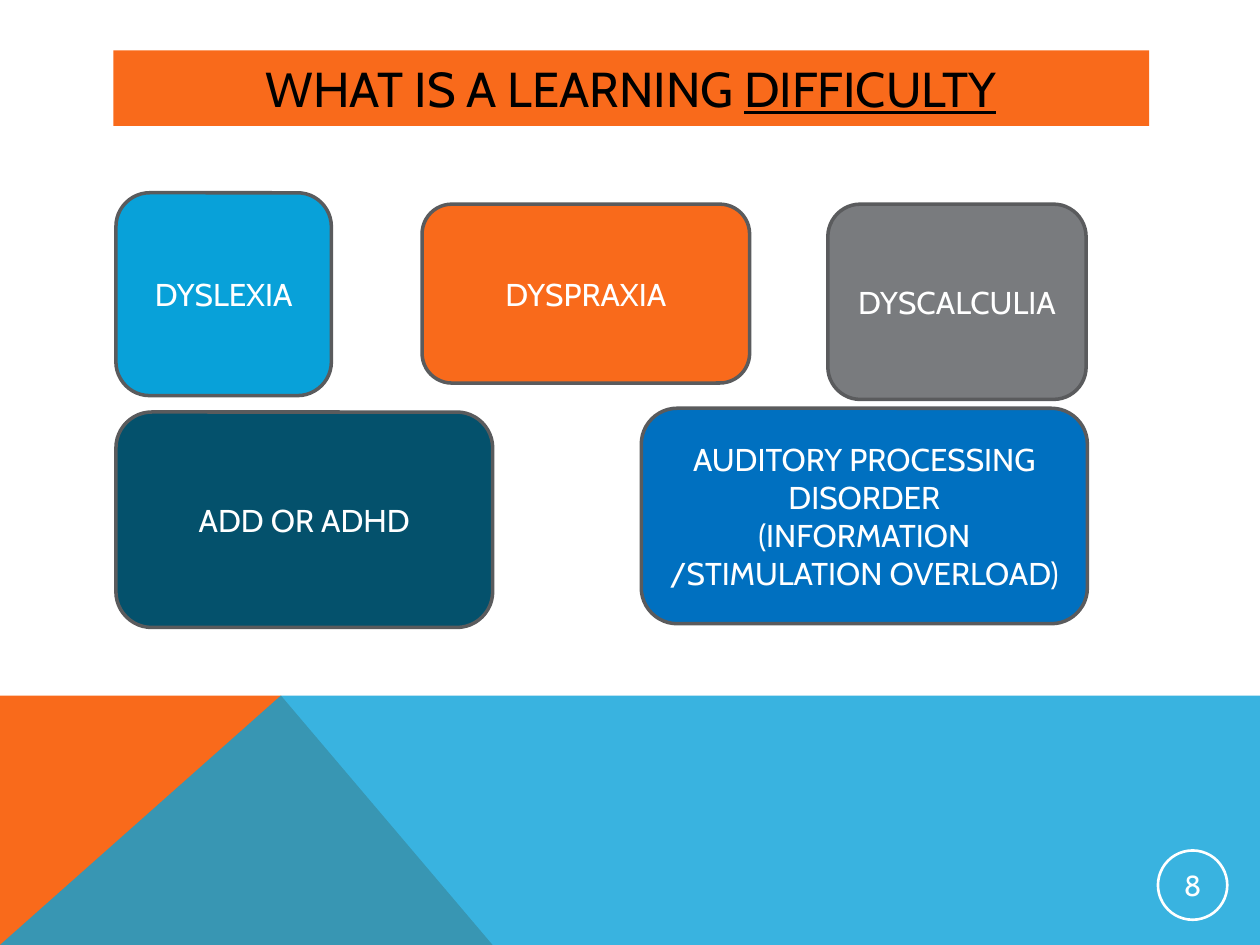
from lxml import etree
from pptx import Presentation
from pptx.dml.color import RGBColor
from pptx.enum.shapes import MSO_SHAPE
from pptx.enum.text import MSO_ANCHOR, PP_ALIGN
from pptx.oxml.ns import qn
from pptx.util import Inches, Pt

RECT, ROUND, OVAL = MSO_SHAPE.RECTANGLE, MSO_SHAPE.ROUNDED_RECTANGLE, MSO_SHAPE.OVAL
MIDDLE, CENTER = MSO_ANCHOR.MIDDLE, PP_ALIGN.CENTER
ORANGE, BLUE, WHITE, EDGE = "F96A1B", "08A1D9", "FFFFFF", "5A5B5D"
color = RGBColor.from_string


def add_box(kind, place, text, fill=None, line=None, width=2, size=18, ink=WHITE, inset=None):
    """Add a shape; text is a list of paragraphs, each a list of runs, with every second run underlined."""
    box = slide.shapes.add_shape(kind, *[Inches(n) for n in place])
    box.shadow.inherit = False
    if fill:
        box.fill.solid()
        box.fill.fore_color.rgb = color(fill)
    else:
        box.fill.background()
    if line:
        box.line.color.rgb = color(line)
        box.line.width = Pt(width)
    else:
        box.line.fill.background()
    frame = box.text_frame
    frame.word_wrap = True
    frame.vertical_anchor = MIDDLE
    if inset is not None:
        frame.margin_left = frame.margin_right = Inches(inset)
        frame.margin_top = frame.margin_bottom = Inches(inset)
    for i, runs in enumerate(text):
        para = frame.add_paragraph() if i else frame.paragraphs[0]
        para.alignment = CENTER
        for j, words in enumerate(runs):
            run = para.add_run()
            run.text = words
            run.font.name = "Cabin"
            run.font.size = Pt(size)
            run.font.color.rgb = color(ink)
            if j % 2:
                run.font.underline = True


deck = Presentation()
deck.slide_width, deck.slide_height = Inches(10), Inches(7.5)
slide = deck.slides.add_slide(deck.slide_layouts[6])

# Footer bands: the translucent blue overlaps the orange
top, peak, base = 5.52, 2.23, 7.5
bands = [
    (ORANGE, 100, [(0, base), (0, top), (peak, top), (3.91, base)]),
    (BLUE, 80, [(0, base), (peak, top), (10, top), (10, base)]),
]
for fill, alpha, points in bands:
    spots = [(Inches(x), Inches(y)) for x, y in points]
    pen = slide.shapes.build_freeform(*spots[0])
    pen.add_line_segments(spots[1:], close=True)
    band = pen.convert_to_shape()
    band.shadow.inherit = False
    band.line.fill.background()
    band.fill.solid()
    band.fill.fore_color.rgb = color(fill)
    if alpha < 100:
        tint = band.fill._xPr.find(".//" + qn("a:srgbClr"))
        etree.SubElement(tint, qn("a:alpha"), val=str(alpha * 1000))

add_box(RECT, (0.9, 0.4, 8.22, 0.6), [["WHAT IS A LEARNING ", "DIFFICULTY"]],
        fill=ORANGE, size=28, ink="000000")

cards = [
    ((0.92, 1.53, 1.71, 1.61), BLUE, [["DYSLEXIA"]]),
    ((3.35, 1.62, 2.6, 1.42), ORANGE, [["DYSPRAXIA"]]),
    ((6.57, 1.62, 2.05, 1.55), "797B7E", [["DYSCALCULIA"]]),
    ((0.92, 3.27, 2.99, 1.71), "04516C", [["ADD OR ADHD"]]),
    ((5.09, 3.24, 3.54, 1.71), "0070C0",
     [["AUDITORY PROCESSING DISORDER"], ["(INFORMATION /STIMULATION OVERLOAD)"]]),
]
for place, fill, text in cards:
    add_box(ROUND, place, text, fill=fill, line=EDGE)

add_box(OVAL, (9.19, 6.75, 0.55, 0.55), [["8"]], line=WHITE, width=1.5, size=16.5, inset=0.01)

deck.save("out.pptx")
